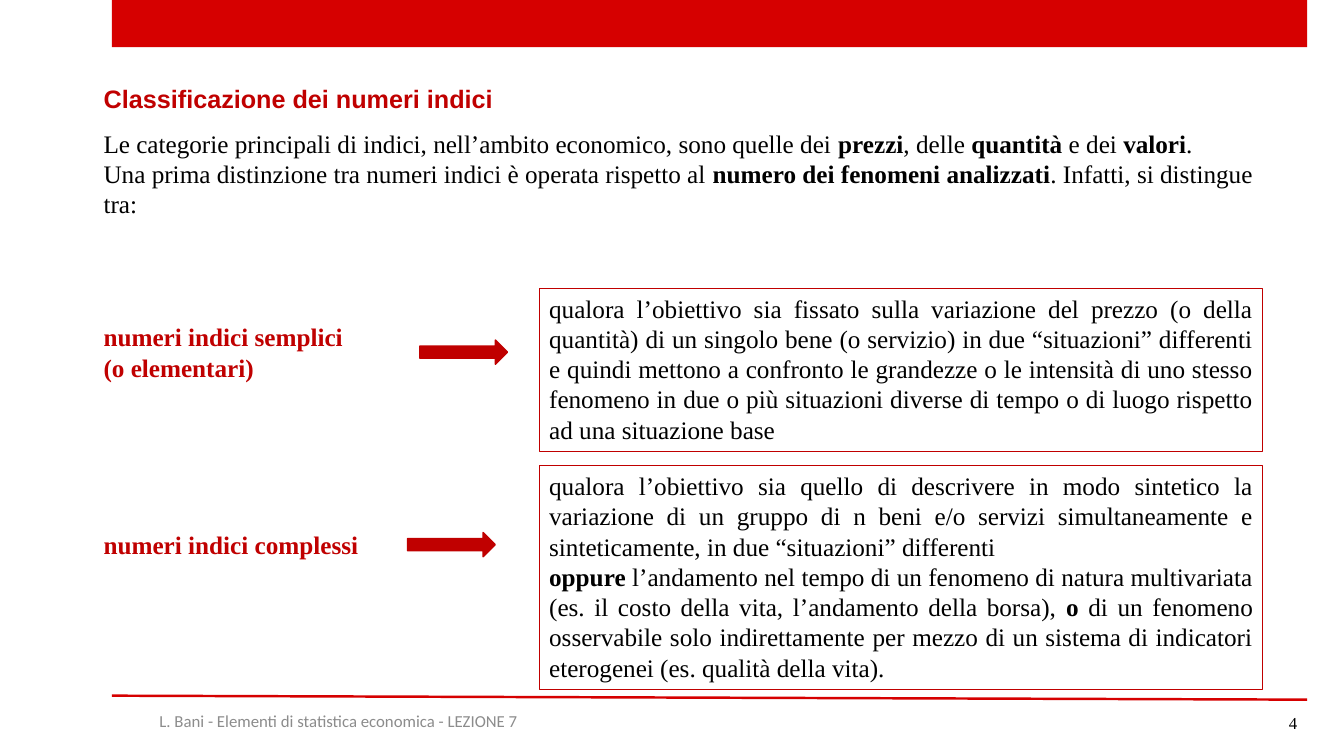
from lxml import etree
from pptx import Presentation
from pptx.dml.color import RGBColor
from pptx.enum.shapes import MSO_CONNECTOR, MSO_SHAPE
from pptx.enum.text import MSO_ANCHOR, PP_ALIGN
from pptx.oxml.ns import qn
from pptx.util import Cm, Pt

BAND_RED = RGBColor(0xD6, 0x00, 0x00)
DARK_RED = RGBColor(0xC0, 0x00, 0x00)
BLACK = RGBColor(0x00, 0x00, 0x00)
GREY = RGBColor(0x8C, 0x8C, 0x8C)
SERIF = "Times New Roman"
RECTANGLE, ARROW = MSO_SHAPE.RECTANGLE, MSO_SHAPE.RIGHT_ARROW
STRAIGHT = MSO_CONNECTOR.STRAIGHT
TOP, MIDDLE = MSO_ANCHOR.TOP, MSO_ANCHOR.MIDDLE
LEFT, CENTER = PP_ALIGN.LEFT, PP_ALIGN.CENTER
RIGHT, JUSTIFY = PP_ALIGN.RIGHT, PP_ALIGN.JUSTIFY

TITLE_ONLY_LAYOUT = 5
TEXT_LEFT = 2.36
INTRO = [
    "Le categorie principali di indici, nell’ambito economico, sono quelle dei "
    "**prezzi**, delle **quantità **e dei **valori**.",
    "Una prima distinzione tra numeri indici è operata rispetto al "
    "**numero dei fenomeni analizzati**. Infatti, si distingue tra:",
]
SIMPLE_LABEL = ["**numeri indici semplici**", "**(o elementari)**"]
SIMPLE_TEXT = [
    "qualora l’obiettivo sia fissato sulla variazione del prezzo (o della quantità) "
    "di un singolo bene (o servizio) in due “situazioni” differenti e quindi mettono "
    "a confronto le grandezze o le intensità di uno stesso fenomeno in due o più "
    "situazioni diverse di tempo o di luogo rispetto ad una situazione base",
]
COMPLEX_LABEL = ["**numeri indici complessi**"]
COMPLEX_TEXT = [
    "qualora l’obiettivo sia quello di descrivere in modo sintetico la variazione di "
    "un gruppo di n beni e/o servizi simultaneamente e sinteticamente, in due "
    "“situazioni” differenti",
    "**oppure **l’andamento nel tempo di un fenomeno di natura multivariata (es. il "
    "costo della vita, l’andamento della borsa), **o **di un fenomeno osservabile solo "
    "indirettamente per mezzo di un sistema di indicatori eterogenei (es. qualità "
    "della vita).",
]


def write(frame, texts, align=LEFT, size=18, font=SERIF, color=BLACK, anchor=TOP):
    """Fill a text frame, one paragraph per text; **marks** enclose bold spans."""
    frame.word_wrap = True
    frame.vertical_anchor = anchor
    for index, text in enumerate(texts):
        para = frame.paragraphs[0] if index == 0 else frame.add_paragraph()
        para.alignment = align
        for part, words in enumerate(text.split("**")):
            if words:
                span = para.add_run()
                span.text = words
                span.font.name = font
                span.font.size = Pt(size)
                span.font.bold = part % 2 == 1
                span.font.color.rgb = color


def add_text(slide, left, top, width, height, texts, **style):
    box = slide.shapes.add_textbox(Cm(left), Cm(top), Cm(width), Cm(height))
    write(box.text_frame, texts, **style)


def add_filled_shape(slide, kind, left, top, width, height, color):
    shape = slide.shapes.add_shape(kind, Cm(left), Cm(top), Cm(width), Cm(height))
    shape.shadow.inherit = False
    shape.fill.solid()
    shape.fill.fore_color.rgb = color
    shape.line.fill.background()
    return shape


def add_arrow(slide, left, top):
    arrow = add_filled_shape(slide, ARROW, left, top, 2.21, 0.61, DARK_RED)
    arrow.line.color.rgb = DARK_RED
    arrow.line.width = Pt(1)


def add_definition(slide, top, height, texts):
    box = slide.shapes.add_shape(RECTANGLE, Cm(13.59), Cm(top), Cm(18.24), Cm(height))
    box.shadow.inherit = False
    box.fill.background()
    box.line.color.rgb = DARK_RED
    box.line.width = Pt(0.75)
    write(box.text_frame, texts, align=JUSTIFY)


def add_footer_line(slide):
    line = slide.shapes.add_connector(STRAIGHT, Cm(2.82), Cm(17.53), Cm(32.94), Cm(17.63))
    line.line.color.rgb = BAND_RED
    line.line.width = Pt(1.75)
    etree.SubElement(line._element.spPr, qn("a:effectLst"))


def set_title(slide, text):
    title = slide.shapes.title
    title.left, title.top = Cm(TEXT_LEFT), Cm(1.98)
    title.width, title.height = Cm(10.41), Cm(1.02)
    write(title.text_frame, [text], font="Arial", color=DARK_RED)


def main():
    deck = Presentation()
    deck.slide_width, deck.slide_height = Cm(33.87), Cm(19.05)
    slide = deck.slides.add_slide(deck.slide_layouts[TITLE_ONLY_LAYOUT])

    add_filled_shape(slide, RECTANGLE, 2.82, 0, 30.12, 1.19, BAND_RED)
    add_footer_line(slide)
    set_title(slide, "**Classificazione dei numeri indici**")
    add_text(slide, TEXT_LEFT, 3.1, 29.46, 2.57, INTRO, align=JUSTIFY)

    add_text(slide, TEXT_LEFT, 7.98, 7.2, 1.8, SIMPLE_LABEL, color=DARK_RED)
    add_arrow(slide, 10.58, 8.57)
    add_definition(slide, 7.26, 4.11, SIMPLE_TEXT)

    add_text(slide, TEXT_LEFT, 13.21, 7.2, 1.02, COMPLEX_LABEL, color=DARK_RED)
    add_arrow(slide, 10.27, 13.42)
    add_definition(slide, 11.73, 5.64, COMPLEX_TEXT)

    add_text(slide, 2.82, 17.65, 11.43, 1.02,
             ["L. Bani - Elementi di statistica economica - LEZIONE 7"],
             align=CENTER, size=12, font="Calibri", color=GREY, anchor=MIDDLE)
    add_text(slide, 25.32, 17.7, 7.62, 1.02, ["4"],
             align=RIGHT, size=12, anchor=MIDDLE)
    deck.save("out.pptx")


if __name__ == "__main__":
    main()
